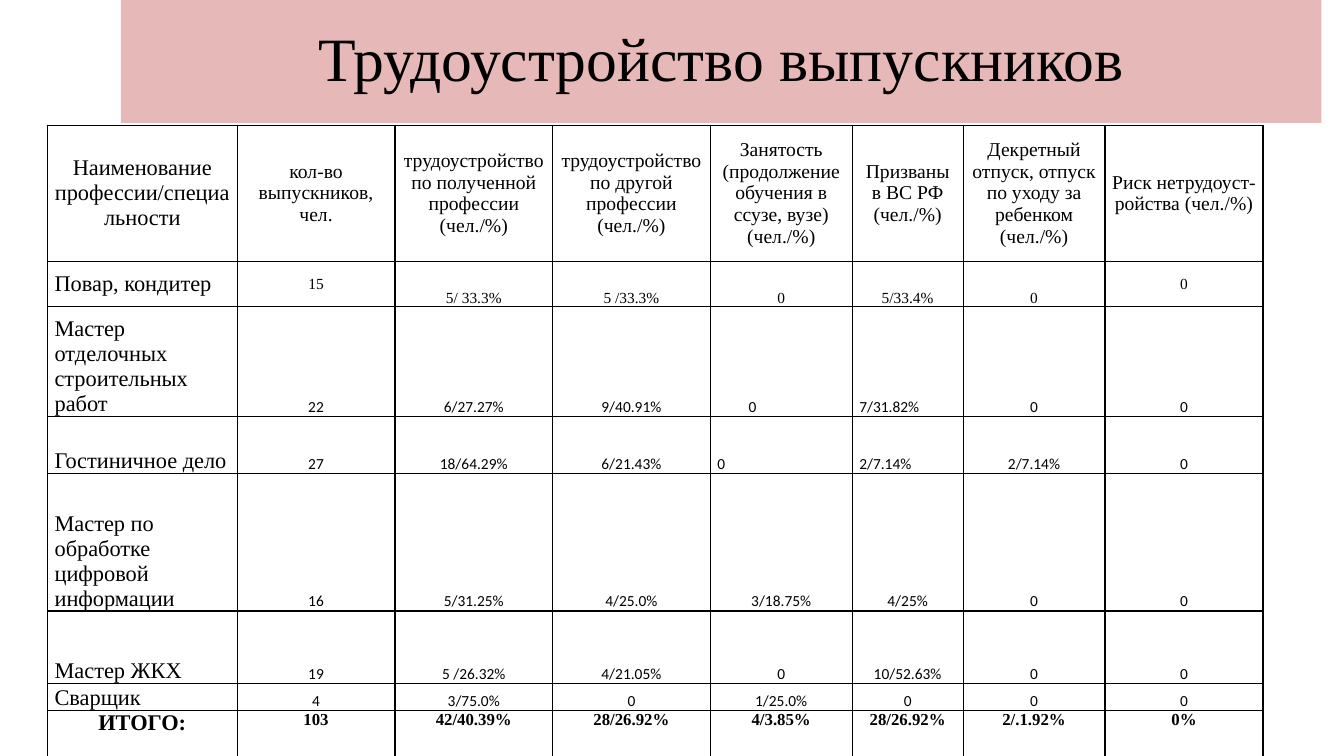
from dataclasses import dataclass
from typing import Any, NamedTuple

from lxml.etree import SubElement
from pptx import Presentation
from pptx.dml.color import RGBColor as Color
from pptx.enum.shapes import MSO_SHAPE as Shape
from pptx.enum.text import MSO_ANCHOR as Anchor, PP_ALIGN as Align
from pptx.oxml.ns import qn
from pptx.util import Pt


@dataclass(frozen=True)
class Theme:
    banner: Color = Color(0xE6, 0xB9, 0xB8)
    ink: Color = Color(0, 0, 0)
    serif: str = "Times New Roman"
    sans: str = "Calibri"
    title_size: float = 44
    name_size: float = 16
    heading_size: float = 14
    total_size: float = 12
    value_size: float = 11
    border: float = 1
    cell_margin: float = 5.04


THEME = Theme()


class CellStyle(NamedTuple):
    size: float
    face: str = THEME.serif
    align: Align = Align.CENTER
    anchor: Anchor = Anchor.BOTTOM
    bold: bool = False
    indent: float = 0


class TableRow(NamedTuple):
    height: float
    texts: list[str]
    name: CellStyle
    value: CellStyle
    special: dict[int, CellStyle] = {}
    open_sides: str = ""


# Cell styles
HEAD_NAME = CellStyle(THEME.name_size, anchor=Anchor.MIDDLE)
HEADING = CellStyle(THEME.heading_size, anchor=Anchor.MIDDLE)
NAME = CellStyle(THEME.name_size, align=Align.LEFT)
VALUE = CellStyle(THEME.value_size, THEME.sans)
LEFT_VALUE = VALUE._replace(align=Align.LEFT)
SERIF_VALUE = CellStyle(THEME.value_size)
MIDDLE_VALUE = SERIF_VALUE._replace(anchor=Anchor.MIDDLE)
TOTAL_NAME = CellStyle(THEME.name_size, anchor=Anchor.TOP, bold=True)
TOTAL = TOTAL_NAME._replace(size=THEME.total_size)

# Table content
COLUMN_WIDTHS = [135.4, 112.8, 112.6, 112.6, 101.4, 79.2, 101.4, 112.8]
SPACER = TableRow(19.4, [""] * len(COLUMN_WIDTHS), VALUE, VALUE, open_sides="B")
ROWS = [
    TableRow(97.2, [
        "Наименование профессии/специальности",
        "кол-во выпускников, чел.",
        "трудоустройство по полученной профессии (чел./%)",
        "трудоустройство по другой профессии (чел./%)",
        "Занятость (продолжение обучения в ссузе, вузе) (чел./%)",
        "Призваны в ВС РФ (чел./%)",
        "Декретный отпуск, отпуск по уходу за ребенком (чел./%)",
        "Риск нетрудоуст-\nройства (чел./%)",
    ], HEAD_NAME, HEADING),
    TableRow(32.4, ["Повар, кондитер", "15", "5/ 33.3%", "5 /33.3%", "0",
                    "5/33.4%", "0", "0"],
             NAME._replace(anchor=Anchor.MIDDLE), SERIF_VALUE,
             {1: MIDDLE_VALUE, 7: MIDDLE_VALUE}),
    TableRow(78.5, ["Мастер отделочных строительных работ", "22", "6/27.27%",
                    "9/40.91%", "0", "7/31.82%", "0", "0"], NAME, VALUE,
             {4: LEFT_VALUE._replace(indent=22.4), 5: LEFT_VALUE}),
    TableRow(41, ["Гостиничное дело", "27", "18/64.29%", "6/21.43%", "0",
                  "2/7.14%", "2/7.14%", "0"], NAME, VALUE,
             {4: LEFT_VALUE, 5: LEFT_VALUE}),
    SPACER,
    TableRow(78.5, ["Мастер по обработке цифровой информации", "16", "5/31.25%",
                    "4/25.0%", "3/18.75%", "4/25%", "0", "0"], NAME, VALUE,
             open_sides="T"),
    SPACER,
    TableRow(32.4, ["Мастер ЖКХ", "19", "5 /26.32%", "4/21.05%", "0",
                    "10/52.63%", "0", "0"], NAME, VALUE, open_sides="T"),
    TableRow(19.4, ["Сварщик", "4", "3/75.0%", "0", "1/25.0%", "0", "0", "0"],
             NAME, VALUE),
    TableRow(35.3, ["ИТОГО:", "103", "42/40.39%", "28/26.92%", "4/3.85%",
                    "28/26.92%", "2/.1.92%", "0%"], TOTAL_NAME, TOTAL),
]


def apply_format(target: Any, values: dict[str, Any]) -> None:
    for name, value in values.items():
        setattr(target, name, value)


def format_span(span: Any, size: float, face: str, bold: bool = False) -> None:
    apply_format(span.font, {"size": Pt(size), "name": face, "bold": bold})
    span.font.color.rgb = THEME.ink


def draw_borders(cell: Any, open_sides: str) -> None:
    properties = cell._tc.get_or_add_tcPr()
    for side in "LRTB":
        line = SubElement(properties, qn(f"a:ln{side}"), w=str(Pt(THEME.border)))
        if side in open_sides:
            SubElement(line, qn("a:noFill"))
        else:
            fill = SubElement(line, qn("a:solidFill"))
            SubElement(fill, qn("a:srgbClr"), val=str(THEME.ink))


def fill_cell(cell: Any, text: str, style: CellStyle, open_sides: str) -> None:
    draw_borders(cell, open_sides)
    cell.fill.background()
    apply_format(cell, {
        "margin_left": Pt(THEME.cell_margin), "margin_right": Pt(THEME.cell_margin),
        "margin_top": 0, "margin_bottom": 0, "vertical_anchor": style.anchor,
    })
    cell.text_frame.text = text
    for para in cell.text_frame.paragraphs:
        para.alignment = style.align
        if style.indent:
            para._p.get_or_add_pPr().set("marL", str(Pt(style.indent)))
        for span in para.runs:
            format_span(span, style.size, style.face, style.bold)
        if not para.runs:
            # An empty cell keeps its row low through its end mark
            SubElement(para._p, qn("a:endParaRPr"), sz=str(int(style.size * 100)))


def draw_title(page: Any) -> None:
    box = page.shapes.add_shape(Shape.RECTANGLE, Pt(86.4), 0, Pt(857.5), Pt(87.8))
    box.shadow.inherit = False
    box.fill.solid()
    box.fill.fore_color.rgb = THEME.banner
    box.line.fill.background()
    apply_format(box.text_frame, {"word_wrap": True, "vertical_anchor": Anchor.MIDDLE})
    para = box.text_frame.paragraphs[0]
    apply_format(para, {"alignment": Align.CENTER, "line_spacing": 0.9})
    span = para.add_run()
    span.text = "Трудоустройство выпускников"
    format_span(span, THEME.title_size, THEME.serif)


def draw_table(page: Any) -> None:
    table = page.shapes.add_table(
        len(ROWS), len(COLUMN_WIDTHS), Pt(34), Pt(89.4),
        Pt(sum(COLUMN_WIDTHS)), Pt(sum(row.height for row in ROWS)),
    ).table
    apply_format(table, {"first_row": False, "horz_banding": False})
    for column, width in zip(table.columns, COLUMN_WIDTHS):
        column.width = Pt(width)
    for row_index, row in enumerate(ROWS):
        table.rows[row_index].height = Pt(row.height)
        for column_index, text in enumerate(row.texts):
            usual = row.value if column_index else row.name
            style = row.special.get(column_index, usual)
            fill_cell(table.cell(row_index, column_index), text, style, row.open_sides)


def main() -> None:
    deck = Presentation()
    apply_format(deck, {"slide_width": Pt(960), "slide_height": Pt(540)})
    page = deck.slides.add_slide(deck.slide_layouts[6])
    draw_title(page)
    draw_table(page)
    deck.save("out.pptx")


if __name__ == "__main__":
    main()
